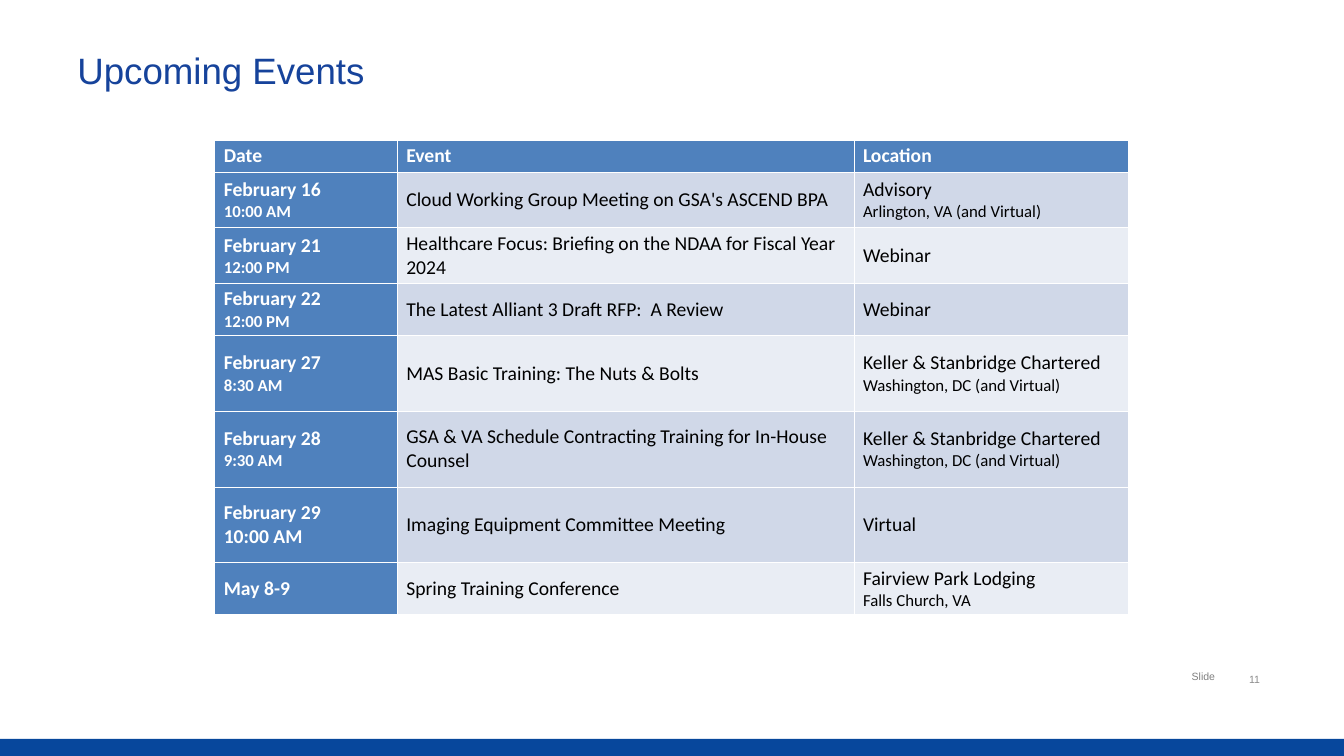
from lxml import etree
from pptx import Presentation
from pptx.dml.color import RGBColor
from pptx.enum.shapes import MSO_SHAPE
from pptx.enum.text import MSO_ANCHOR
from pptx.oxml.ns import qn
from pptx.util import Inches, Pt

RECTANGLE = MSO_SHAPE.RECTANGLE
TOP, MIDDLE = MSO_ANCHOR.TOP, MSO_ANCHOR.MIDDLE

WHITE = RGBColor(0xFF, 0xFF, 0xFF)
BLACK = RGBColor(0x00, 0x00, 0x00)
FOOTER_BLUE = RGBColor(0x07, 0x47, 0x9C)
TITLE_BLUE = RGBColor(0x16, 0x43, 0x9B)
HEADER_BLUE = RGBColor(0x4F, 0x81, 0xBD)
DARK_BAND = RGBColor(0xD0, 0xD8, 0xE8)
LIGHT_BAND = RGBColor(0xE9, 0xED, 0xF4)
LABEL_GRAY = RGBColor(0x80, 0x80, 0x80)
NUMBER_GRAY = RGBColor(0x8C, 0x8C, 0x8C)

MAIN_SIZE, DETAIL_SIZE = 14, 12
COLUMN_WIDTHS = (1.81, 4.53, 2.72)
ROW_HEIGHTS = (0.32, 0.55, 0.55, 0.52, 0.75, 0.75, 0.75, 0.52)
LIGHT_ROWS = (2, 4, 7)


def line(text, size=MAIN_SIZE):
    """Return a paragraph made of one span."""
    return [(text, size)]


def stacked(main, detail):
    """Return a main line with a smaller line below it."""
    return [line(main), line(detail, DETAIL_SIZE)]


LAW_FIRM = [[("Keller & Stanbridge Chartered ", MAIN_SIZE),
             ("Washington, DC (and Virtual)", DETAIL_SIZE)]]
WEBINAR = [line("Webinar")]

EVENT_ROWS = [
    ([line("Date")], [line("Event")], [line("Location")]),
    (stacked("February 16", "10:00 AM"),
     [line("Cloud Working Group Meeting on GSA's ASCEND BPA")],
     stacked("Advisory", "Arlington, VA (and Virtual)")),
    (stacked("February 21", "12:00 PM"),
     [line("Healthcare Focus: Briefing on the NDAA for Fiscal Year 2024")],
     WEBINAR),
    (stacked("February 22", "12:00 PM"),
     [line("The Latest Alliant 3 Draft RFP:  A Review")],
     WEBINAR),
    (stacked("February 27", "8:30 AM"),
     [line("MAS Basic Training: The Nuts & Bolts")],
     LAW_FIRM),
    (stacked("February 28", "9:30 AM"),
     [line("GSA & VA Schedule Contracting Training for In-House Counsel")],
     LAW_FIRM),
    ([line("February 29"), line("10:00 AM")],
     [line("Imaging Equipment Committee Meeting")],
     [line("Virtual")]),
    ([line("May 8-9")],
     [line("Spring Training Conference")],
     stacked("Fairview Park Lodging", "Falls Church, VA")),
]


def set_font(font, name, size, color, bold=False):
    """Set the look of a font."""
    font.name = name
    font.size = Pt(size)
    font.bold = bold
    font.color.rgb = color


def add_text(page, text, left, top, width, height, size, color, anchor=MIDDLE, wrap=True):
    """Add a one-line Arial text box and return its paragraph."""
    box = page.shapes.add_textbox(Inches(left), Inches(top), Inches(width), Inches(height))
    frame = box.text_frame
    frame.word_wrap = wrap
    frame.vertical_anchor = anchor
    para = frame.paragraphs[0]
    para.text = text
    set_font(para.font, "Arial", size, color)
    return para


def add_footer_bar(page):
    """Add the blue bar along the bottom edge."""
    bar = page.shapes.add_shape(RECTANGLE, 0, Inches(7.33), Inches(13.33), Inches(0.17))
    bar.shadow.inherit = False
    bar.fill.solid()
    bar.fill.fore_color.rgb = FOOTER_BLUE
    bar.line.fill.background()


def add_borders(cell):
    """Draw thin white lines on all sides of a cell."""
    properties = cell._tc.get_or_add_tcPr()
    for side in ("a:lnL", "a:lnR", "a:lnT", "a:lnB"):
        border = etree.SubElement(properties, qn(side), w=str(Pt(0.5)))
        fill = etree.SubElement(border, qn("a:solidFill"))
        etree.SubElement(fill, qn("a:srgbClr"), val=str(WHITE))


def fill_cell(cell, lines, fill_color, text_color, bold):
    """Style a cell and write its paragraphs."""
    cell.vertical_anchor = MIDDLE
    cell.margin_left = cell.margin_right = Inches(0.09)
    cell.margin_top = cell.margin_bottom = Inches(0.04)
    add_borders(cell)
    cell.fill.solid()
    cell.fill.fore_color.rgb = fill_color
    frame = cell.text_frame
    for index, spans in enumerate(lines):
        para = frame.add_paragraph() if index else frame.paragraphs[0]
        set_font(para.font, "Calibri", spans[0][1], text_color, bold)
        for text, size in spans:
            span = para.add_run()
            span.text = text
            if size != spans[0][1]:
                span.font.size = Pt(size)


def add_event_table(page):
    """Add the table of events."""
    table = page.shapes.add_table(
        len(EVENT_ROWS), len(COLUMN_WIDTHS), Inches(2.13), Inches(1.39),
        Inches(sum(COLUMN_WIDTHS)), Inches(sum(ROW_HEIGHTS))).table
    table.horz_banding = False
    for column, width in zip(table.columns, COLUMN_WIDTHS):
        column.width = Inches(width)
    for row_index, (row, height) in enumerate(zip(EVENT_ROWS, ROW_HEIGHTS)):
        table.rows[row_index].height = Inches(height)
        band = LIGHT_BAND if row_index in LIGHT_ROWS else DARK_BAND
        for column_index, lines in enumerate(row):
            heading = row_index == 0 or column_index == 0
            fill_cell(table.cell(row_index, column_index), lines,
                      HEADER_BLUE if heading else band,
                      WHITE if heading else BLACK, heading)


def main():
    """Build the slide and save it."""
    deck = Presentation()
    deck.slide_width, deck.slide_height = Inches(13.33), Inches(7.5)
    page = deck.slides.add_slide(deck.slide_layouts[6])
    add_footer_bar(page)
    add_text(page, "Slide", 11.72, 6.6, 0.69, 0.27, 7.5, LABEL_GRAY, TOP, False)
    title = add_text(page, "Upcoming Events", 0.67, 0.3, 12, 0.87, 26.2, TITLE_BLUE)
    title.line_spacing = 0.8
    add_event_table(page)
    add_text(page, "11", 12.29, 6.6, 0.75, 0.27, 7.5, NUMBER_GRAY)
    deck.save("out.pptx")


if __name__ == "__main__":
    main()
